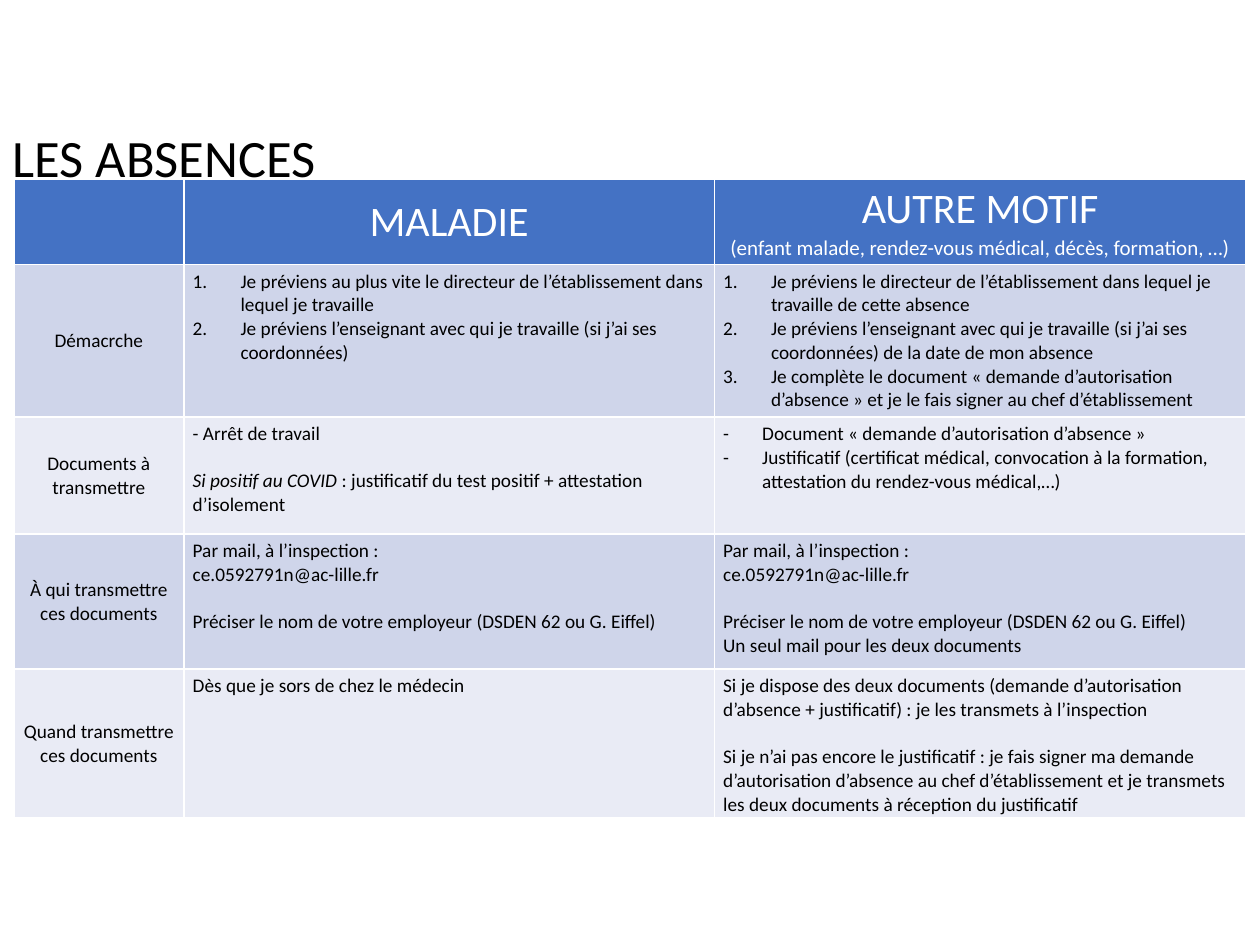
from lxml.etree import SubElement
from pptx import Presentation
from pptx.dml.color import RGBColor
from pptx.enum.text import MSO_ANCHOR as Anchor, MSO_AUTO_SIZE as Fit, PP_ALIGN as Align
from pptx.oxml import parse_xml
from pptx.oxml.ns import nsdecls, qn
from pptx.util import Inches, Pt

FONT = "Calibri"
WHITE, BLACK, BLUE = "FFFFFF", "000000", "4472C4"
BANDS = ["CFD5EA", "E9EBF5"]
COLS = [1.35, 4.21, 4.22]
ROWS = [0.68, 1.21, 0.93, 1.07, 1.12]
GAP = 13.4  # one line of 11 pt text

HEADS = [
    [],
    [("MALADIE", 24)],
    [("AUTRE MOTIF", 24),
     ("(enfant malade, rendez-vous médical, décès, formation, …)", 12)],
]
MAIL = ["Par mail, à l’inspection :", "ce.0592791n@ac-lille.fr"]
BOSS = "Préciser le nom de votre employeur (DSDEN 62 ou G. Eiffel)"

# Each row: label, then two cells of (list mark, blocks of lines)
BODY = [
    ("Démacrche",
     ("1", [[
         "Je préviens au plus vite le directeur de l’établissement dans lequel je travaille",
         "Je préviens l’enseignant avec qui je travaille (si j’ai ses coordonnées)"]]),
     ("1", [[
         "Je préviens le directeur de l’établissement dans lequel je travaille de cette absence",
         "Je préviens l’enseignant avec qui je travaille (si j’ai ses coordonnées) "
         "de la date de mon absence",
         "Je complète le document « demande d’autorisation d’absence » "
         "et je le fais signer au chef d’établissement"]])),
    ("Documents à transmettre",
     (None, [
         ["- Arrêt de travail"],
         [("Si positif au COVID ",
           ": justificatif du test positif + attestation d’isolement")]]),
     ("-", [[
         "Document « demande d’autorisation d’absence »",
         "Justificatif (certificat médical, convocation à la formation, "
         "attestation du rendez-vous médical,…)"]])),
    ("À qui transmettre ces documents",
     (None, [MAIL, [BOSS]]),
     (None, [MAIL, [BOSS, "Un seul mail pour les deux documents"]])),
    ("Quand transmettre ces documents",
     (None, [["Dès que je sors de chez le médecin"]]),
     (None, [
         ["Si je dispose des deux documents (demande d’autorisation d’absence "
          "+ justificatif) : je les transmets à l’inspection"],
         ["Si je n’ai pas encore le justificatif : je fais signer ma demande "
          "d’autorisation d’absence au chef d’établissement et je transmets "
          "les deux documents à réception du justificatif"]])),
]


def color(code):
    return RGBColor.from_string(code)


def write(para, text, size=11, hue=BLACK, align=Align.LEFT, italic=False, before=0):
    para.alignment = align
    para.space_before = Pt(before)
    run = para.add_run()
    run.text = text
    font = run.font
    font.name, font.size, font.bold, font.italic = FONT, Pt(size), False, italic
    font.color.rgb = color(hue)


def paras(frame):
    """Yield the first paragraph of a frame, then new ones."""
    yield frame.paragraphs[0]
    while True:
        yield frame.add_paragraph()


def bullet(para, mark):
    props = para._p.get_or_add_pPr()
    indent = Inches(0.38 if mark == "1" else 0.31)
    props.set("marL", str(indent))
    props.set("indent", str(-indent))
    if mark == "1":
        SubElement(props, qn("a:buAutoNum"), type="arabicPeriod")
    else:
        SubElement(props, qn("a:buFont"), typeface=FONT)
        SubElement(props, qn("a:buChar"), char=mark)


def style(cell, fill, anchor=Anchor.TOP):
    cell.fill.solid()
    cell.fill.fore_color.rgb = color(fill)
    cell.vertical_anchor = anchor
    cell.margin_left = cell.margin_right = Inches(0.07)
    cell.margin_top = cell.margin_bottom = Inches(0.04)
    props = cell._tc.get_or_add_tcPr()
    for spot, side in enumerate("LRTB"):
        props.insert(spot, parse_xml(
            f'<a:ln{side} {nsdecls("a")} w="{Pt(1)}"><a:solidFill>'
            f'<a:srgbClr val="{WHITE}"/></a:solidFill></a:ln{side}>'))


def fill_cell(cell, mark, blocks):
    feed = paras(cell.text_frame)
    for order, block in enumerate(blocks):
        for place, line in enumerate(block):
            para = next(feed)
            before = GAP if order and not place else 0
            if isinstance(line, tuple):
                write(para, line[0], italic=True, before=before)
                line = line[1]
            write(para, line, before=before)
            if mark:
                bullet(para, mark)


def add_title(slide, left, top, width, height):
    title = slide.shapes.title
    title.left, title.top = Inches(left), Inches(top)
    title.width, title.height = Inches(width), Inches(height)
    frame = title.text_frame
    frame.word_wrap = True
    frame.auto_size = Fit.SHAPE_TO_FIT_TEXT
    frame.vertical_anchor = Anchor.TOP
    write(frame.paragraphs[0], "LES ABSENCES", size=30)


def add_grid(slide, left, top, width, height):
    table = slide.shapes.add_table(
        len(ROWS), len(COLS), Inches(left), Inches(top),
        Inches(width), Inches(height)).table
    table.first_row = table.horz_banding = False
    for col, size in zip(table.columns, COLS):
        col.width = Inches(size)
    for row, size in zip(table.rows, ROWS):
        row.height = Inches(size)

    # Header row
    for col, lines in enumerate(HEADS):
        cell = table.cell(0, col)
        style(cell, BLUE, anchor=Anchor.MIDDLE)
        for (text, size), para in zip(lines, paras(cell.text_frame)):
            write(para, text, size=size, hue=WHITE, align=Align.CENTER)

    # Label and detail cells
    for row, (label, *details) in enumerate(BODY, 1):
        band = BANDS[(row - 1) % 2]
        head = table.cell(row, 0)
        style(head, band, anchor=Anchor.MIDDLE)
        write(head.text_frame.paragraphs[0], label, align=Align.CENTER)
        for col, (mark, blocks) in enumerate(details, 1):
            cell = table.cell(row, col)
            style(cell, band)
            fill_cell(cell, mark, blocks)


def main():
    deck = Presentation()
    deck.slide_width, deck.slide_height = Inches(10), Inches(7.5)
    slide = deck.slides.add_slide(deck.slide_layouts[5])
    add_title(slide, 0, 0.94, 10, 0.61)
    add_grid(slide, 0.11, 1.42, sum(COLS), sum(ROWS))
    deck.save("out.pptx")


if __name__ == "__main__":
    main()
